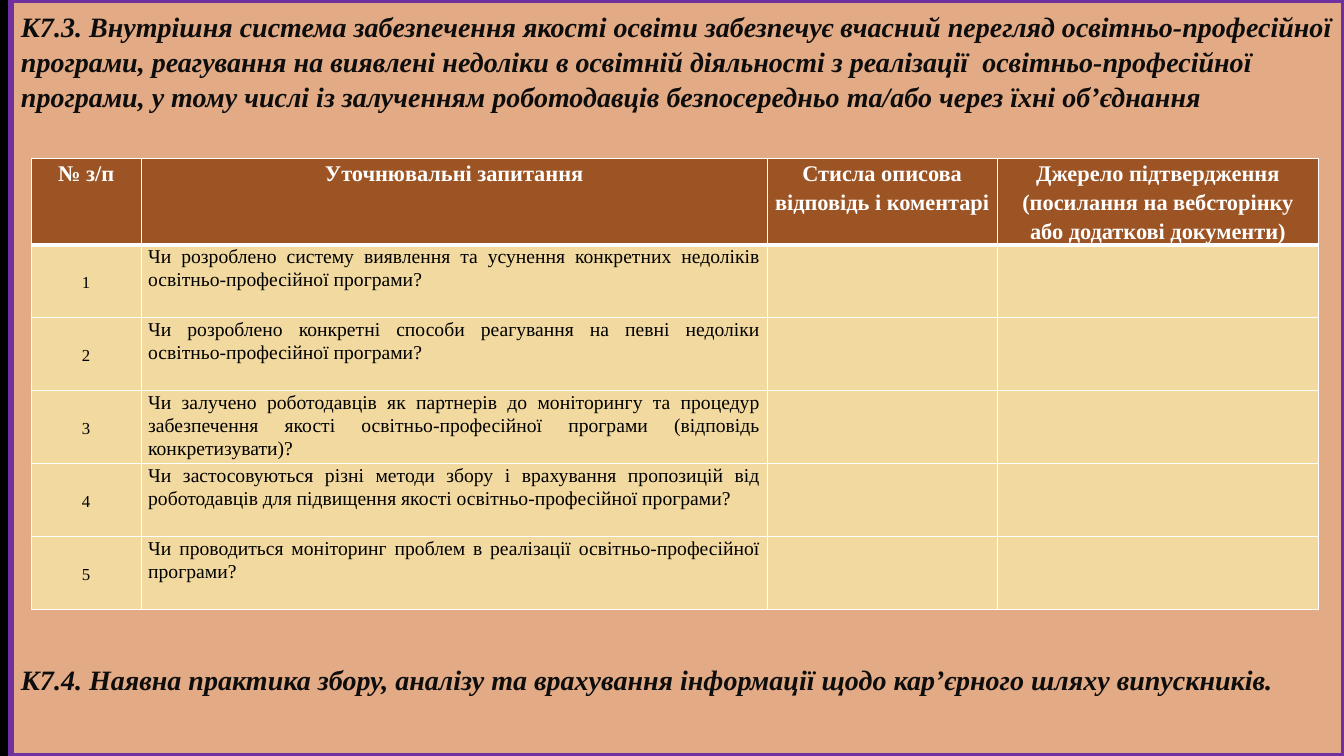
from typing import NamedTuple

from lxml import etree
from pptx import Presentation
from pptx.dml.color import RGBColor
from pptx.enum.shapes import MSO_SHAPE
from pptx.enum.text import MSO_ANCHOR, PP_ALIGN
from pptx.oxml.ns import qn
from pptx.util import Inches, Pt

RECTANGLE = MSO_SHAPE.RECTANGLE
TOP, MIDDLE = MSO_ANCHOR.TOP, MSO_ANCHOR.MIDDLE
LEFT, CENTER, JUSTIFY = PP_ALIGN.LEFT, PP_ALIGN.CENTER, PP_ALIGN.JUSTIFY

FONT = "Times New Roman"
BLACK, WHITE, INK = "000000", "FFFFFF", "0D0D0D"
PANEL_FILL, PANEL_LINE = "E2AA85", "7030A0"
HEADER_FILL, BODY_FILL = "9D5425", "F1D99F"
HEADER_HEIGHT, ROW_HEIGHT = 0.86, 0.724


class Column(NamedTuple):
    width: float
    heading: list[str]


CRITERION_REVIEW = (
    "К7.3. Внутрішня система забезпечення якості освіти забезпечує вчасний перегляд "
    "освітньо-професійної програми, реагування на виявлені недоліки в освітній діяльності "
    "з реалізації  освітньо-професійної програми, у тому числі із залученням роботодавців "
    "безпосередньо та/або через їхні об’єднання"
)
CRITERION_CAREERS = (
    "К7.4. Наявна практика збору, аналізу та врахування інформації "
    "щодо кар’єрного шляху випускників."
)
COLUMNS = [
    Column(1.09, ["№ з/п"]),
    Column(6.21, ["Уточнювальні запитання"]),
    Column(2.28, ["Стисла описова відповідь і коментарі"]),
    Column(3.19, ["Джерело підтвердження",
                   "(посилання на вебсторінку або додаткові документи)"]),
]
QUESTIONS = [
    "Чи розроблено систему виявлення та усунення конкретних недоліків "
    "освітньо-професійної програми?",
    "Чи розроблено конкретні способи реагування на певні недоліки "
    "освітньо-професійної програми?",
    "Чи залучено роботодавців як партнерів до моніторингу та процедур забезпечення якості "
    "освітньо-професійної програми (відповідь конкретизувати)?",
    "Чи застосовуються різні методи збору і врахування пропозицій від роботодавців "
    "для підвищення якості освітньо-професійної програми?",
    "Чи проводиться моніторинг проблем в реалізації освітньо-професійної програми?",
]


def color(value: str) -> RGBColor:
    return RGBColor.from_string(value)


def write(frame, paragraphs: list[str], *, size: float, ink: str, bold: bool = False,
          italic: bool = False, align=LEFT, spacing: float = 1.0, gap: float = 0) -> None:
    """Fill a text frame; gap is the space in points between paragraphs."""
    for index, text in enumerate(paragraphs):
        paragraph = frame.add_paragraph() if index else frame.paragraphs[0]
        paragraph.alignment = align
        paragraph.line_spacing = spacing
        paragraph.space_before = Pt(gap if index else 0)
        run = paragraph.add_run()
        run.text = text
        font = run.font
        font.name, font.size, font.bold, font.italic = FONT, Pt(size), bold, italic
        font.color.rgb = color(ink)


def style_cell(cell, fill: str, bottom: float = 1, top: float = 1) -> None:
    """Give a cell its fill and white borders, with widths in points."""
    properties = cell._tc.get_or_add_tcPr()
    for side, width in {"L": 1, "R": 1, "T": top, "B": bottom}.items():
        border = etree.SubElement(properties, qn(f"a:ln{side}"), w=str(Pt(width)))
        solid = etree.SubElement(border, qn("a:solidFill"))
        etree.SubElement(solid, qn("a:srgbClr"), val=WHITE)
    cell.fill.solid()
    cell.fill.fore_color.rgb = color(fill)
    cell.margin_left = cell.margin_right = Inches(0.07)
    cell.margin_top = cell.margin_bottom = 0


def add_panel(slide) -> None:
    panel = slide.shapes.add_shape(RECTANGLE, Inches(0.11), 0, Inches(13.22), Inches(7.5))
    panel.shadow.inherit = False
    panel.fill.solid()
    panel.fill.fore_color.rgb = color(PANEL_FILL)
    panel.line.color.rgb = color(PANEL_LINE)
    panel.line.width = Pt(4.5)
    frame = panel.text_frame
    frame.word_wrap = True
    frame.vertical_anchor = TOP
    frame.margin_top = Inches(0.08)
    write(frame, [CRITERION_REVIEW, CRITERION_CAREERS], size=20, ink=INK,
          bold=True, italic=True, spacing=1.04, gap=392)


def add_questions(slide) -> None:
    table = slide.shapes.add_table(
        len(QUESTIONS) + 1, len(COLUMNS), Inches(0.31), Inches(1.57),
        Inches(sum(column.width for column in COLUMNS)),
        Inches(HEADER_HEIGHT + ROW_HEIGHT * len(QUESTIONS))).table

    # Header row
    table.rows[0].height = Inches(HEADER_HEIGHT)
    for index, column in enumerate(COLUMNS):
        table.columns[index].width = Inches(column.width)
        heading = table.cell(0, index)
        style_cell(heading, HEADER_FILL, bottom=3)
        write(heading.text_frame, column.heading, size=16, ink=WHITE, bold=True,
              align=CENTER, spacing=1.15)

    # Numbered questions with empty answer cells
    for row, question in enumerate(QUESTIONS, start=1):
        table.rows[row].height = Inches(ROW_HEIGHT)
        for index in range(len(COLUMNS)):
            style_cell(table.cell(row, index), BODY_FILL, top=3 if row == 1 else 1)
        number = table.cell(row, 0)
        number.vertical_anchor = MIDDLE
        write(number.text_frame, [str(row)], size=12, ink=BLACK, align=CENTER, spacing=1.15)
        write(table.cell(row, 1).text_frame, [question], size=14, ink=BLACK,
              align=JUSTIFY, spacing=1.06)


def main() -> None:
    presentation = Presentation()
    presentation.slide_width, presentation.slide_height = Inches(13.33), Inches(7.5)
    slide = presentation.slides.add_slide(presentation.slide_layouts[6])
    slide.background.fill.solid()
    slide.background.fill.fore_color.rgb = color(BLACK)
    add_panel(slide)
    add_questions(slide)
    presentation.save("out.pptx")


if __name__ == "__main__":
    main()
